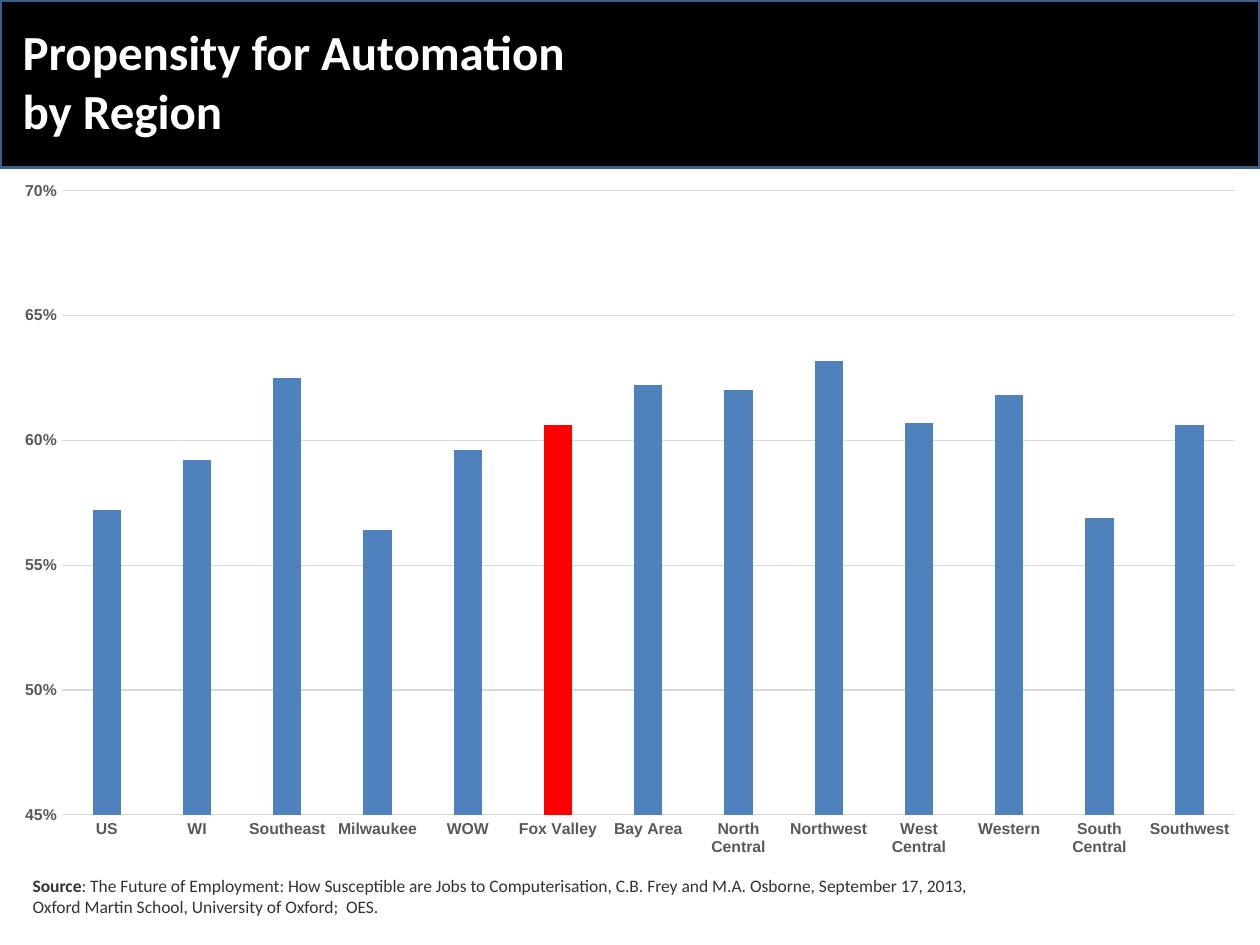
"""Build a slide charting the propensity for automation by region."""
import pptx
import pptx.chart.data
import pptx.dml.color
import pptx.enum.chart
import pptx.enum.shapes
import pptx.enum.text
import pptx.util

RGBColor = pptx.dml.color.RGBColor
Inches = pptx.util.Inches
Pt = pptx.util.Pt

BLACK = RGBColor(0x00, 0x00, 0x00)
WHITE = RGBColor(0xFF, 0xFF, 0xFF)
BLUE = RGBColor(0x4F, 0x81, 0xBD)
BORDER = RGBColor(0x3A, 0x5F, 0x8C)
RED = RGBColor(0xFF, 0x00, 0x00)
GRID = RGBColor(0xD9, 0xD9, 0xD9)
LABEL = RGBColor(0x59, 0x59, 0x59)
NOTE = RGBColor(0x33, 0x33, 0x33)

TITLE = "Propensity for Automation \vby Region"
SOURCE = [
    ["Source", ": The Future of Employment: How Susceptible are Jobs to Computerisation, "
     "C.B. Frey and M.A. Osborne, September 17, 2013,"],
    ["Oxford Martin School, University of Oxford;  OES."],
]
REGIONS = {
    "US": 0.572,
    "WI": 0.592,
    "Southeast": 0.625,
    "Milwaukee": 0.564,
    "WOW": 0.596,
    "Fox Valley": 0.606,
    "Bay Area": 0.622,
    "North Central": 0.62,
    "Northwest": 0.632,
    "West Central": 0.607,
    "Western": 0.618,
    "South Central": 0.569,
    "Southwest": 0.606,
}
HIGHLIGHT = "Fox Valley"
WIDTH, HEIGHT, BAND_HEIGHT = 10, 7.5, 1.33


def style_font(font, name, size, color, bold):
    font.name = name
    font.size = Pt(size)
    font.color.rgb = color
    font.bold = bold


def style_line(line, color, width):
    line.color.rgb = color
    line.width = Pt(width)


def add_header(page):
    title = page.shapes.title
    band = page.shapes.add_shape(
        pptx.enum.shapes.MSO_SHAPE.RECTANGLE, 0, 0, Inches(WIDTH), Inches(BAND_HEIGHT))
    band.shadow.inherit = False
    band.fill.solid()
    band.fill.fore_color.rgb = BLACK
    style_line(band.line, BORDER, 2)
    title.element.addprevious(band.element)

    title.left, title.top = Inches(0.08), Inches(0.12)
    title.width, title.height = Inches(8), Inches(1.04)
    title.text_frame.text = TITLE
    title.text_frame.vertical_anchor = pptx.enum.text.MSO_ANCHOR.MIDDLE
    para = title.text_frame.paragraphs[0]
    para.alignment = pptx.enum.text.PP_ALIGN.LEFT
    for span in para.runs:
        style_font(span.font, "Calibri", 28, WHITE, True)


def add_source(page):
    box = page.shapes.add_textbox(Inches(0.16), Inches(6.88), Inches(10.09), Inches(0.46))
    frame = box.text_frame
    frame.word_wrap = True
    frame.vertical_anchor = pptx.enum.text.MSO_ANCHOR.MIDDLE
    for index, parts in enumerate(SOURCE):
        para = frame.add_paragraph() if index else frame.paragraphs[0]
        for part in parts:
            span = para.add_run()
            span.text = part
            style_font(span.font, "Calibri", 10, NOTE, part == "Source")


def add_region_chart(page):
    data = pptx.chart.data.CategoryChartData(number_format="0.0%")
    data.categories = list(REGIONS)
    data.add_series("Series 1", list(REGIONS.values()))
    chart = page.shapes.add_chart(
        pptx.enum.chart.XL_CHART_TYPE.COLUMN_CLUSTERED,
        0, Inches(BAND_HEIGHT), Inches(WIDTH), Inches(5.58), data).chart
    chart.has_title = False
    chart.has_legend = False
    style_font(chart.font, "Arial", 10, BLACK, False)

    plot = chart.plots[0]
    plot.vary_by_categories = False
    plot.gap_width = 219
    plot.overlap = -27
    series = plot.series[0]
    highlight = series.points[list(REGIONS).index(HIGHLIGHT)]
    for item, color in ((series, BLUE), (highlight, RED)):
        item.format.fill.solid()
        item.format.fill.fore_color.rgb = color

    for axis in (chart.category_axis, chart.value_axis):
        axis.major_tick_mark = pptx.enum.chart.XL_TICK_MARK.NONE
        axis.minor_tick_mark = pptx.enum.chart.XL_TICK_MARK.NONE
        style_font(axis.tick_labels.font, "Arial", 9, LABEL, True)
    style_line(chart.category_axis.format.line, GRID, 0.75)

    scale = chart.value_axis
    scale.minimum_scale, scale.maximum_scale, scale.major_unit = 0.45, 0.7, 0.05
    scale.tick_labels.number_format = "0%"
    scale.tick_labels.number_format_is_linked = False
    scale.format.line.fill.background()
    style_line(scale.major_gridlines.format.line, GRID, 0.75)


def main():
    deck = pptx.Presentation()
    deck.slide_width, deck.slide_height = Inches(WIDTH), Inches(HEIGHT)
    page = deck.slides.add_slide(deck.slide_layouts.get_by_name("Title Only"))
    add_header(page)
    add_source(page)
    add_region_chart(page)
    deck.save("out.pptx")


if __name__ == "__main__":
    main()
